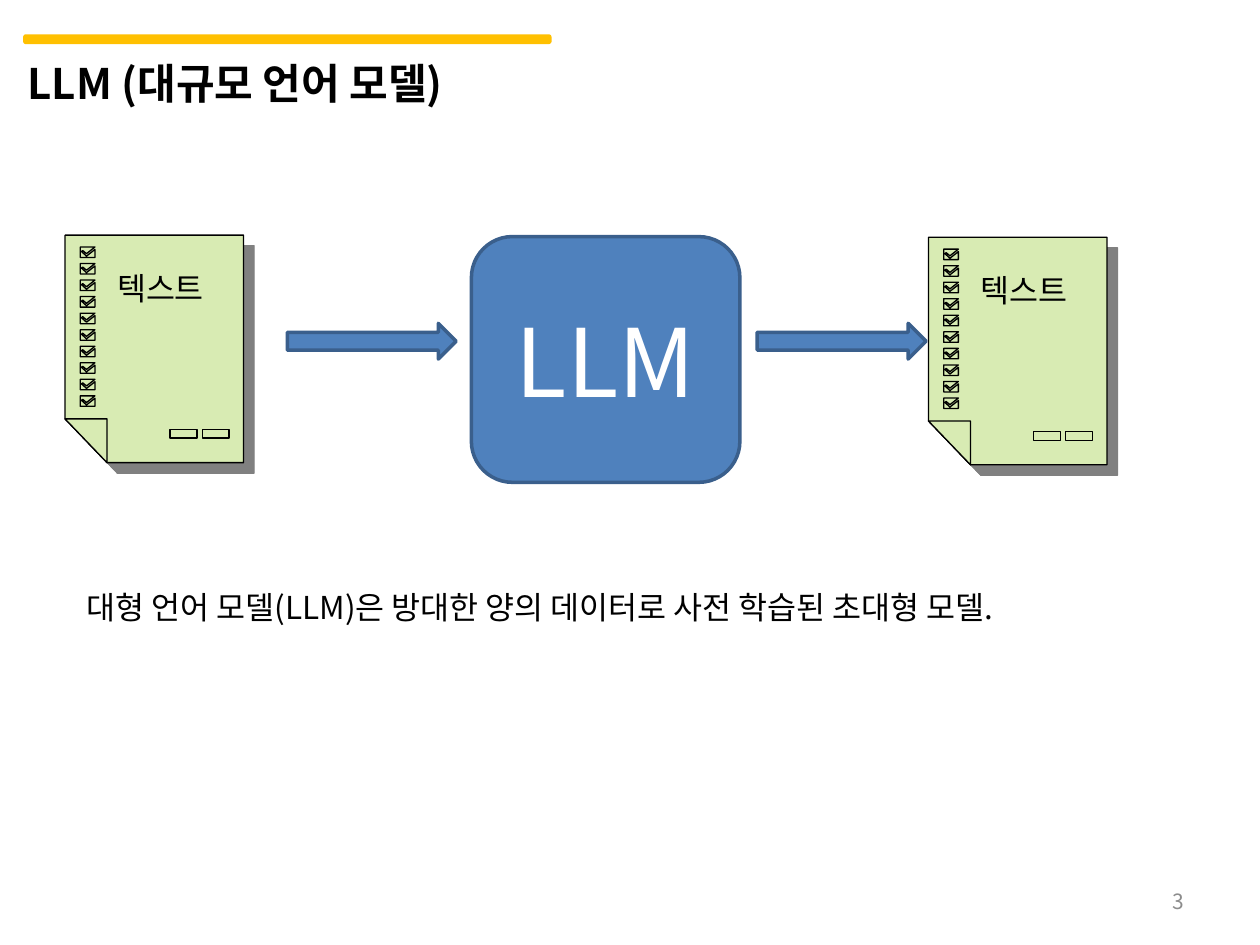
from lxml.etree import SubElement
from pptx import Presentation
from pptx.dml.color import RGBColor
from pptx.enum.shapes import MSO_SHAPE
from pptx.enum.text import MSO_ANCHOR, PP_ALIGN
from pptx.oxml.ns import qn
from pptx.util import Pt

FONT = "Noto Sans CJK KR"
BLUE, DARK_BLUE, GOLD, GREEN = "4F81BD", "3A5F8C", "FFC000", "D8EBB3"
BLACK, WHITE, GRAY, SHADOW = "000000", "FFFFFF", "8C8C8C", "808080"


def color(hex_value):
    return RGBColor.from_string(hex_value)


def paint(shape, fill, line, width):
    shape.fill.solid()
    shape.fill.fore_color.rgb = color(fill)
    shape.line.color.rgb = color(line)
    shape.line.width = Pt(width)
    shape.shadow.inherit = False


def write(shape, text, size, hex_value=BLACK, bold=False, align=PP_ALIGN.LEFT, anchor=MSO_ANCHOR.TOP):
    frame = shape.text_frame
    frame.word_wrap = True
    frame.vertical_anchor = anchor
    frame.text = text
    paragraph = frame.paragraphs[0]
    paragraph.alignment = align
    for run in paragraph.runs:
        run.font.size = Pt(size)
        run.font.bold = bold
        run.font.color.rgb = color(hex_value)
        run.font.name = FONT
        SubElement(run.font._element, qn("a:ea"), typeface=FONT)


def add_block(slide, kind, box):
    block = slide.shapes.add_shape(kind, *map(Pt, box))
    paint(block, BLUE, DARK_BLUE, 2)
    return block


def add_text(slide, box, text, size, **style):
    write(slide.shapes.add_textbox(*map(Pt, box)), text, size, **style)


def rectangle(left, top, width, height):
    return [(left, top), (left + width, top), (left + width, top + height), (left, top + height)]


def checkbox(left, top):
    outline = [(0, 0), (8.4, 0), (3.6, 3.8), (1.4, 2), (0.7, 2.6), (3.6, 5.2), (8.4, 1.4), (8.4, 6), (0, 6)]
    return [(left + x, top + y) for x, y in outline]


def split_contours(shape):
    combined = shape._element.find(".//" + qn("a:path"))
    path_list = combined.getparent()
    for step in list(combined):
        if step.tag == qn("a:moveTo"):
            contour = SubElement(path_list, qn("a:path"), dict(combined.attrib))
        contour.append(step)
    path_list.remove(combined)


def add_document(slide, box, label):
    left, top, width, height = box
    fold_x, fold_y = 24, height - 25
    contours = [
        [(fold_x, height), (0, fold_y), (0, 0), (width, 0), (width, height)],
        [(0, fold_y), (fold_x, fold_y), (fold_x, height)],
    ]
    contours += [rectangle(60 + 18.4 * i, 111.2, 15.4, 4.8) for i in range(2)]
    contours += [checkbox(8.7, 6.8 + 9.45 * i) for i in range(10)]

    builder = None
    for contour in contours:
        start, *rest = [(Pt(left + x), Pt(top + y)) for x, y in contour]
        if builder is None:
            builder = slide.shapes.build_freeform(*start)
        else:
            builder.move_to(*start)
        builder.add_line_segments(rest, close=True)
    document = builder.convert_to_shape()
    split_contours(document)
    paint(document, GREEN, BLACK, 0.75)

    effects = document._element.spPr.find(qn("a:effectLst"))
    shadow = SubElement(effects, qn("a:outerShdw"), dist=str(Pt(8.5)), dir="2700000", algn="ctr", rotWithShape="0")
    SubElement(shadow, qn("a:srgbClr"), val=SHADOW)
    add_text(slide, (left + 22.6, top + 15.8, 79.2, 28.8), label, 18)


def add_header(slide, box, text):
    left, top, width, height = box
    bar = slide.shapes.add_shape(MSO_SHAPE.ROUNDED_RECTANGLE, Pt(left + 5.6), Pt(top), Pt(300), Pt(3.6))
    paint(bar, GOLD, GOLD, 2)
    title = slide.shapes.title
    title.left, title.top, title.width, title.height = map(Pt, (left, top + 8.7, width, height - 8.7))
    write(title, text, 24, bold=True)


def add_flow(slide, box):
    left, top, width, height = box
    add_document(slide, (left, top, 102, 130), "텍스트")
    add_document(slide, (left + width - 102, top + 1.2, 102, 130), "텍스트")
    model = add_block(slide, MSO_SHAPE.ROUNDED_RECTANGLE, (left + 232.2, top + 0.8, 153.4, height))
    write(model, "LLM", 54, WHITE, align=PP_ALIGN.CENTER, anchor=MSO_ANCHOR.MIDDLE)
    for arrow_left in (left + 127, left + 395.5):
        add_block(slide, MSO_SHAPE.RIGHT_ARROW, (arrow_left, top + 50.4, 96.5, 20.4))


def main():
    presentation = Presentation()
    presentation.slide_width, presentation.slide_height = Pt(720), Pt(540)
    slide = presentation.slides.add_slide(presentation.slide_layouts[5])
    add_header(slide, (8.6, 20.6, 312, 45), "LLM (대규모 언어 모델)")
    add_flow(slide, (37.2, 134.4, 595.4, 140.4))
    add_text(slide, (42.5, 332.6, 640.8, 28.8),
             "대형 언어 모델(LLM)은 방대한 양의 데이터로 사전 학습된 초대형 모델.", 18)
    add_text(slide, (516, 500.5, 168, 28.8), "3", 12, hex_value=GRAY,
             align=PP_ALIGN.RIGHT, anchor=MSO_ANCHOR.MIDDLE)
    presentation.save("out.pptx")


if __name__ == "__main__":
    main()
